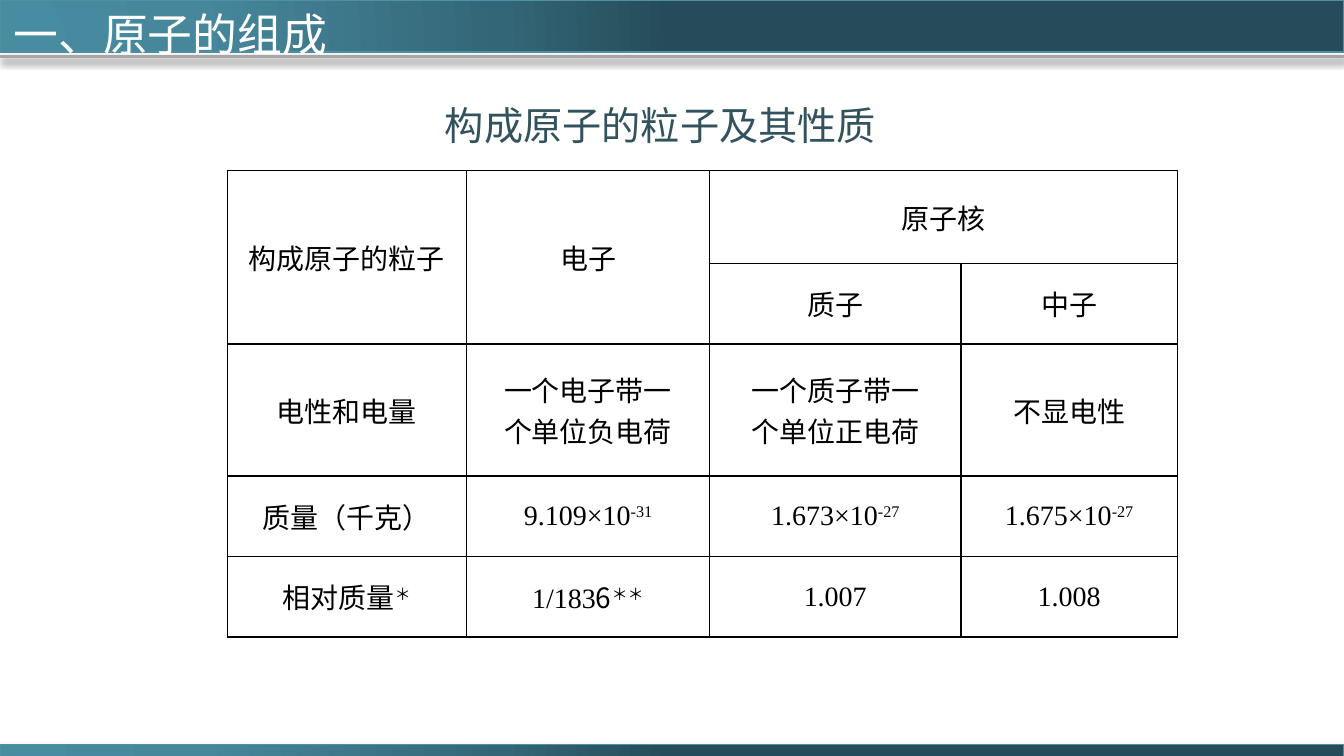
import pptx
import pptx.util
import pptx.dml.color
import pptx.enum.shapes
import pptx.enum.text
import pptx.oxml
import pptx.oxml.ns

Inches = pptx.util.Inches
Pt = pptx.util.Pt
RGBColor = pptx.dml.color.RGBColor
PP_ALIGN = pptx.enum.text.PP_ALIGN
MIDDLE = pptx.enum.text.MSO_ANCHOR.MIDDLE
qn = pptx.oxml.ns.qn

BLACK = RGBColor(0x00, 0x00, 0x00)
WHITE = RGBColor(0xFF, 0xFF, 0xFF)
SLATE = RGBColor(0x32, 0x52, 0x5D)
BAR_EDGE = RGBColor(0x50, 0x90, 0xA5)
RULE_GRAY = RGBColor(0xA6, 0xA6, 0xA6)
BAR_STOPS = [
    (0, RGBColor(0x48, 0x8C, 0xA2)),
    (30, RGBColor(0x46, 0x87, 0x9C)),
    (75, RGBColor(0x33, 0x66, 0x77)),
    (100, RGBColor(0x25, 0x4C, 0x58)),
]
CJK_FONT = "Noto Sans CJK SC"
SERIF = "Times New Roman"
SANS = "Arial"

SLIDE_WIDTH = 10
SLIDE_HEIGHT = SLIDE_WIDTH * 9 / 16
COLUMN_WIDTHS = [1.78, 1.81, 1.87, 1.61]
ROW_HEIGHTS = [0.69, 0.6, 0.98, 0.6, 0.6]

# A cell is a list of lines; a line is a list of (text, run format) pairs.
SUPER = {"superscript": True}
PARTICLE_ROWS = [
    ["构成原子的粒子", "电子", "原子核", None],
    [None, None, "质子", "中子"],
    ["电性和电量", "一个电子带一\n个单位负电荷", "一个质子带一\n个单位正电荷", "不显电性"],
    ["质量（千克）"] + [[[(mantissa + "×10", {}), (exponent, SUPER)]]
                  for mantissa, exponent in
                  (("9.109", "-31"), ("1.673", "-27"), ("1.675", "-27"))],
    [[[("相对质量", {}), ("＊", SUPER)]],
     [[("1/183", {}), ("6", {"font": CJK_FONT}), ("＊＊", SUPER)]],
     "1.007", "1.008"],
]
MERGES = [((0, 0), (1, 0)), ((0, 1), (1, 1)), ((0, 2), (0, 3))]


def drawing_xml(markup):
    """Parse one DrawingML element given without its namespace declaration."""
    head, rest = markup.split(" ", 1)
    return pptx.oxml.parse_xml(f"{head} {pptx.oxml.ns.nsdecls('a')} {rest}")


def add_run(paragraph, text, size=15, font=SERIF, color=BLACK, superscript=False):
    run = paragraph.add_run()
    run.text = text
    run.font.size = Pt(size)
    run.font.name = font
    run.font.bold = False
    run.font.color.rgb = color
    properties = run.font._element
    properties.append(drawing_xml(f'<a:ea typeface="{CJK_FONT}"/>'))
    if superscript:
        properties.set("baseline", "30000")


def write_text(text_frame, text, align=PP_ALIGN.CENTER, **run_format):
    """Fill a frame from plain text or from lines of (text, format) pairs."""
    lines = text
    if isinstance(text, str):
        lines = [[(line, {})] for line in text.split("\n")]
    for index, line in enumerate(lines):
        paragraph = text_frame.add_paragraph() if index else text_frame.paragraphs[0]
        paragraph.alignment = align
        for run_text, override in line:
            add_run(paragraph, run_text, **{**run_format, **override})


def set_shadow(shape, opacity=None, blur=0, distance=0):
    """Give a black downward shadow, or none when there is no opacity."""
    effects = drawing_xml("<a:effectLst />")
    if opacity:
        effects.append(drawing_xml(
            f'<a:outerShdw blurRad="{Pt(blur)}" dist="{Pt(distance)}" dir="5400000" '
            f'rotWithShape="0"><a:srgbClr val="{BLACK}">'
            f'<a:alpha val="{opacity * 1000}"/></a:srgbClr></a:outerShdw>'))
    shape._element.spPr.append(effects)


def set_bar_gradient(shape):
    stops = "".join(f'<a:gs pos="{position * 1000}"><a:srgbClr val="{color}"/></a:gs>'
                    for position, color in BAR_STOPS)
    gradient = drawing_xml(
        f'<a:gradFill rotWithShape="1"><a:gsLst>{stops}</a:gsLst><a:path path="circle">'
        '<a:fillToRect l="5000" t="100000" r="120000" b="10000"/></a:path></a:gradFill>')
    shape.fill.background()
    properties = shape._element.spPr
    properties.replace(properties.find(qn("a:noFill")), gradient)


def set_cell_borders(cell, **widths):
    properties = cell._tc.get_or_add_tcPr()
    for index, side in enumerate("LRTB"):
        properties.insert(index, drawing_xml(
            f'<a:ln{side} w="{Pt(widths.get(side, 1))}"><a:solidFill>'
            f'<a:srgbClr val="{BLACK}"/></a:solidFill></a:ln{side}>'))


class SlideBuilder:
    def __init__(self, slide):
        self.slide = slide
        self.shapes = slide.shapes

    def bar(self, top, height, **shadow):
        shape = self.shapes.add_shape(
            pptx.enum.shapes.MSO_SHAPE.RECTANGLE,
            Inches(0), Inches(top), Inches(SLIDE_WIDTH), Inches(height))
        set_bar_gradient(shape)
        shape.line.color.rgb = BAR_EDGE
        shape.line.width = Pt(1)
        set_shadow(shape, **shadow)

    def rule(self, top, **shadow):
        line = self.shapes.add_connector(
            pptx.enum.shapes.MSO_CONNECTOR.STRAIGHT,
            Inches(0), Inches(top), Inches(SLIDE_WIDTH), Inches(top))
        line.line.color.rgb = RULE_GRAY
        line.line.width = Pt(2)
        set_shadow(line, **shadow)

    def label(self, shape, text, **text_format):
        frame = shape.text_frame
        frame.word_wrap = False
        frame.auto_size = pptx.enum.text.MSO_AUTO_SIZE.NONE
        frame.vertical_anchor = MIDDLE
        write_text(frame, text, font=SANS, **text_format)

    def title(self, text, left, top, width, height):
        shape = self.shapes.title
        shape.left, shape.top = Inches(left), Inches(top)
        shape.width, shape.height = Inches(width), Inches(height)
        shape.text_frame.margin_right = 0  # keeps the title on one line
        self.shapes._spTree.append(shape._element)  # in front of the header bar
        self.label(shape, text, align=PP_ALIGN.LEFT, size=24, color=WHITE)

    def caption(self, text, left, top, width, height):
        shape = self.shapes.add_textbox(
            Inches(left), Inches(top), Inches(width), Inches(height))
        self.label(shape, text, size=21, color=SLATE)

    def table(self, rows, left, top):
        table = self.shapes.add_table(
            len(rows), len(COLUMN_WIDTHS), Inches(left), Inches(top),
            Inches(sum(COLUMN_WIDTHS)), Inches(sum(ROW_HEIGHTS))).table
        table.first_row = table.horz_banding = False
        for column, width in zip(table.columns, COLUMN_WIDTHS):
            column.width = Inches(width)
        for row, height in zip(table.rows, ROW_HEIGHTS):
            row.height = Inches(height)
        for row_index, row in enumerate(rows):
            for column_index, text in enumerate(row):
                cell = table.cell(row_index, column_index)
                cell.fill.background()
                cell.vertical_anchor = MIDDLE
                cell.margin_left = cell.margin_right = Inches(0.08)
                cell.margin_top = cell.margin_bottom = Inches(0.04)
                reaches_right_edge = not any(row[column_index + 1:])
                set_cell_borders(cell, L=1 if column_index else 0.75,
                                 R=0.75 if reaches_right_edge else 1)
                if text:
                    write_text(cell.text_frame, text)
        for first, last in MERGES:
            table.cell(*first).merge(table.cell(*last))


def main():
    presentation = pptx.Presentation()
    presentation.slide_width = Inches(SLIDE_WIDTH)
    presentation.slide_height = Inches(SLIDE_HEIGHT)
    title_only = presentation.slide_layouts[5]
    builder = SlideBuilder(presentation.slides.add_slide(title_only))
    builder.bar(0, 0.39)
    builder.rule(0.42, opacity=40, blur=4, distance=2)
    builder.bar(5.54, 0.09, opacity=42, blur=4, distance=1.6)
    builder.table(PARTICLE_ROWS, 1.69, 1.27)
    builder.caption("构成原子的粒子及其性质", 3.21, 0.7, 3.41, 0.45)
    builder.title("一、原子的组成", 0, 0, 2.53, 0.5)
    presentation.save("out.pptx")


if __name__ == "__main__":
    main()
